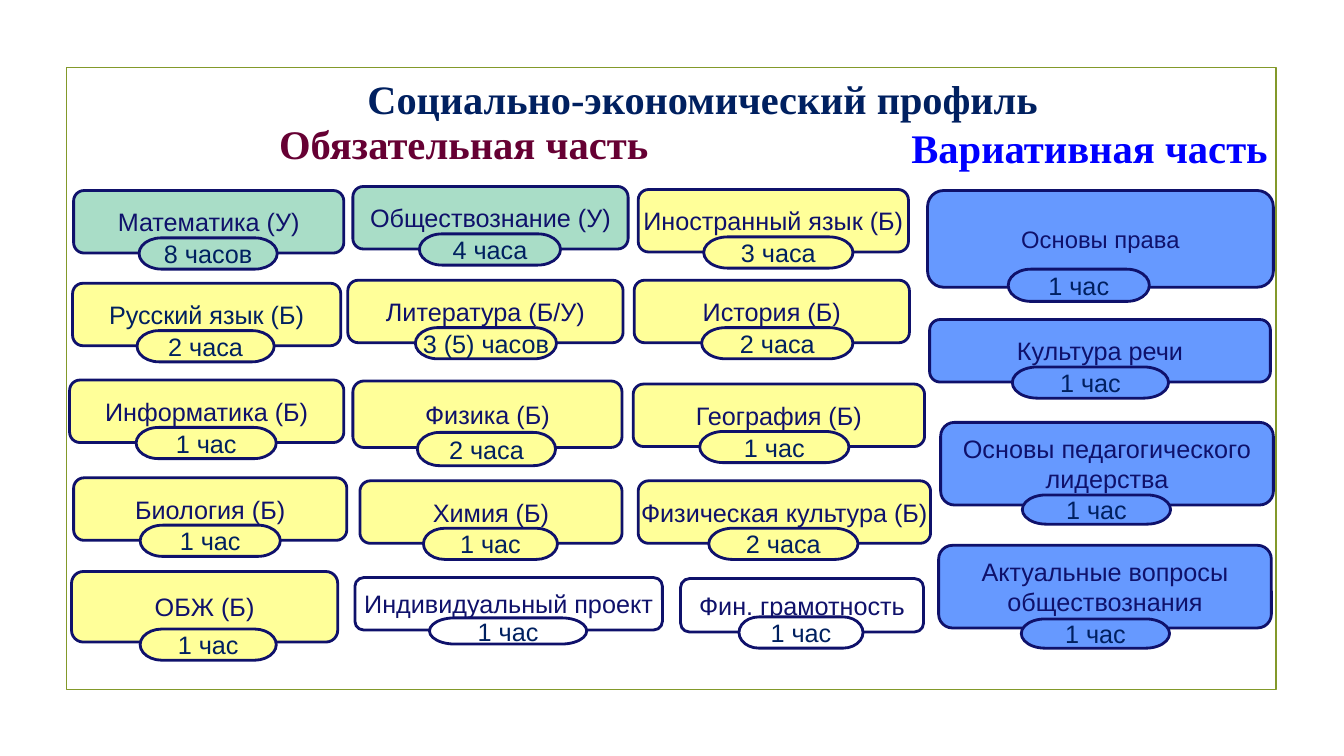
from dataclasses import dataclass

from pptx import Presentation
from pptx.dml.color import RGBColor
from pptx.enum.shapes import MSO_SHAPE as Shape
from pptx.enum.text import MSO_ANCHOR as Anchor, PP_ALIGN as Align
from pptx.util import Inches, Pt


@dataclass(frozen=True)
class Theme:
    """Colours, fonts and type sizes of the slide."""
    navy: str = "002060"
    indigo: str = "0F116B"
    plum: str = "660033"
    blue: str = "0000FF"
    olive: str = "83992A"
    green: str = "A9DDC7"
    yellow: str = "FFFF99"
    sky: str = "6699FF"
    white: str = "FFFFFF"
    serif: str = "Times New Roman"
    sans: str = "Arial"
    title: float = 28.8
    heading: float = 29
    label: float = 18
    small: float = 17


THEME = Theme()


@dataclass(frozen=True)
class Box:
    """A rectangle in inches."""
    left: float
    top: float
    width: float
    height: float

    def inside(self, dx, dy, width, height):
        """Return a box offset from this one's corner."""
        return Box(self.left + dx, self.top + dy, width, height)

    def lengths(self):
        """Return left, top, width and height as lengths."""
        return [Inches(n) for n in (self.left, self.top, self.width, self.height)]


@dataclass(frozen=True)
class Card:
    """A subject with its weekly hours, placed within its part of the slide."""
    subject: str
    hours: str
    left: float
    top: float
    width: float
    hours_left: float
    hours_width: float
    height: float = 0.62
    hours_height: float = 0.31
    overlap: float = 0.15
    fill: str = THEME.yellow
    ink: str = THEME.indigo
    size: float = THEME.label


REQUIRED = [
    Card("Математика (У)", "8 часов", 0.07, 0.04, 2.68, 0.65, 1.37, fill=THEME.green),
    Card("Русский язык (Б)", "2 часа", 0.06, 0.96, 2.66, 0.64, 1.36, ink=THEME.navy),
    Card("Информатика (Б)", "1 час", 0.03, 1.92, 2.72, 0.66, 1.39),
    Card("Биология (Б)", "1 час", 0.07, 2.89, 2.71, 0.66, 1.39),
    Card("ОБЖ (Б)", "1 час", 0.05, 3.82, 2.64, 0.68, 1.35, height=0.7, overlap=0.13),
    Card("Обществознание (У)", "4 часа", 2.84, 0, 2.73, 0.66, 1.4, fill=THEME.green),
    Card("Литература (Б/У)", "3 (5) часов", 2.79, 0.93, 2.73, 0.67, 1.4),
    Card("Физика (Б)", "2 часа", 2.84, 1.93, 2.67, 0.64, 1.37,
         height=0.66, hours_height=0.33),
    Card("Химия (Б)", "1 час", 2.91, 2.92, 2.6, 0.63, 1.33),
    Card("Индивидуальный проект", "1 час", 2.86, 3.88, 3.05, 0.74, 1.56,
         height=0.52, hours_height=0.26, overlap=0.12, fill=THEME.white),
    Card("Иностранный язык (Б)", "3 часа", 5.67, 0.03, 2.68, 0.65, 1.48),
    Card("История (Б)", "2 часа", 5.63, 0.93, 2.73, 0.67, 1.5),
    Card("География (Б)", "1 час", 5.62, 1.96, 2.89, 0.66, 1.48),
    Card("Физическая культура (Б)", "2 часа", 5.67, 2.92, 2.9, 0.7, 1.48),
    Card("Фин. грамотность", "1 час", 6.09, 3.89, 2.41, 0.58, 1.23,
         height=0.53, fill=THEME.white),
]

ELECTIVE = [
    Card("Основы права", "1 час", 0, 0, 3.43, 0.8, 1.4, height=0.96,
         hours_height=0.32, overlap=0.18, fill=THEME.sky, size=THEME.small),
    Card("Культура речи", "1 час", 0.02, 1.28, 3.38, 0.82, 1.55, fill=THEME.sky),
    Card("Основы педагогического\nлидерства", "1 час", 0.13, 2.3, 3.3, 0.81, 1.47,
         height=0.82, hours_height=0.29, overlap=0.1, fill=THEME.sky),
    Card("Актуальные вопросы\nобществознания", "1 час", 0.11, 3.52, 3.3, 0.82, 1.47,
         height=0.82, hours_height=0.29, overlap=0.09, fill=THEME.sky),
]


def write(shape, text, *, size=THEME.label, color=THEME.indigo, font=THEME.sans,
          bold=False, align=Align.CENTER, anchor=Anchor.MIDDLE, wrap=False):
    """Put formatted text into a shape, one paragraph per line."""
    frame = shape.text_frame
    frame.text = text
    frame.word_wrap = wrap
    frame.vertical_anchor = anchor
    for paragraph in frame.paragraphs:
        paragraph.alignment = align
        paragraph.font.name = font
        paragraph.font.size = Pt(size)
        paragraph.font.bold = bold
        paragraph.font.color.rgb = RGBColor.from_string(color)


def add_outline(shapes, preset, box, *, fill=None, line=THEME.indigo, weight=2):
    """Add a flat preset shape with an outline."""
    shape = shapes.add_shape(preset, *box.lengths())
    shape.shadow.inherit = False
    if fill:
        shape.fill.solid()
        shape.fill.fore_color.rgb = RGBColor.from_string(fill)
    else:
        shape.fill.background()
    shape.line.color.rgb = RGBColor.from_string(line)
    shape.line.width = Pt(weight)
    return shape


def add_title(slide, box, text):
    """Place the slide title in the given box."""
    title = slide.shapes.title
    title.left, title.top, title.width, title.height = box.lengths()
    write(title, text, size=THEME.title, color=THEME.navy, font=THEME.serif,
          bold=True, wrap=True)


def add_card(slide, box, card):
    """Group a subject box with the hours badge on its lower edge."""
    shapes = slide.shapes.add_group_shape().shapes
    subject = add_outline(shapes, Shape.FLOWCHART_ALTERNATE_PROCESS, box, fill=card.fill)
    write(subject, card.subject, color=card.ink, size=card.size)
    badge = box.inside(card.hours_left, box.height - card.overlap,
                       card.hours_width, card.hours_height)
    hours = add_outline(shapes, Shape.FLOWCHART_TERMINATOR, badge, fill=card.fill)
    write(hours, card.hours, color=THEME.navy)


def add_part(slide, box, heading, cards, *, color, heading_left):
    """Fill one part of the curriculum with its heading and subject cards."""
    caption = slide.shapes.add_textbox(*box.inside(heading_left, 0, 3.9, 0.6).lengths())
    write(caption, heading, size=THEME.heading, color=color, font=THEME.serif,
          bold=True, align=Align.LEFT, anchor=Anchor.TOP, wrap=True)
    for card in cards:
        place = box.inside(card.left, 0.72 + card.top, card.width, card.height)
        add_card(slide, place, card)


def main():
    """Build the curriculum slide and save it."""
    deck = Presentation()
    deck.slide_width, deck.slide_height = Inches(13.33), Inches(7.5)
    slide = deck.slides.add_slide(deck.slide_layouts[5])
    add_outline(slide.shapes, Shape.RECTANGLE, Box(0.66, 0.67, 12, 6.17),
                line=THEME.olive, weight=1.25)
    add_title(slide, Box(2.3, 0.73, 9.34, 0.5), "Социально-экономический профиль")
    add_part(slide, Box(0.66, 1.13, 8.57, 5.5), "Обязательная часть", REQUIRED,
             color=THEME.plum, heading_left=2.01)
    add_part(slide, Box(9.2, 1.17, 3.43, 5.5), "Вариативная часть", ELECTIVE,
             color=THEME.blue, heading_left=-0.26)
    deck.save("out.pptx")


if __name__ == "__main__":
    main()
